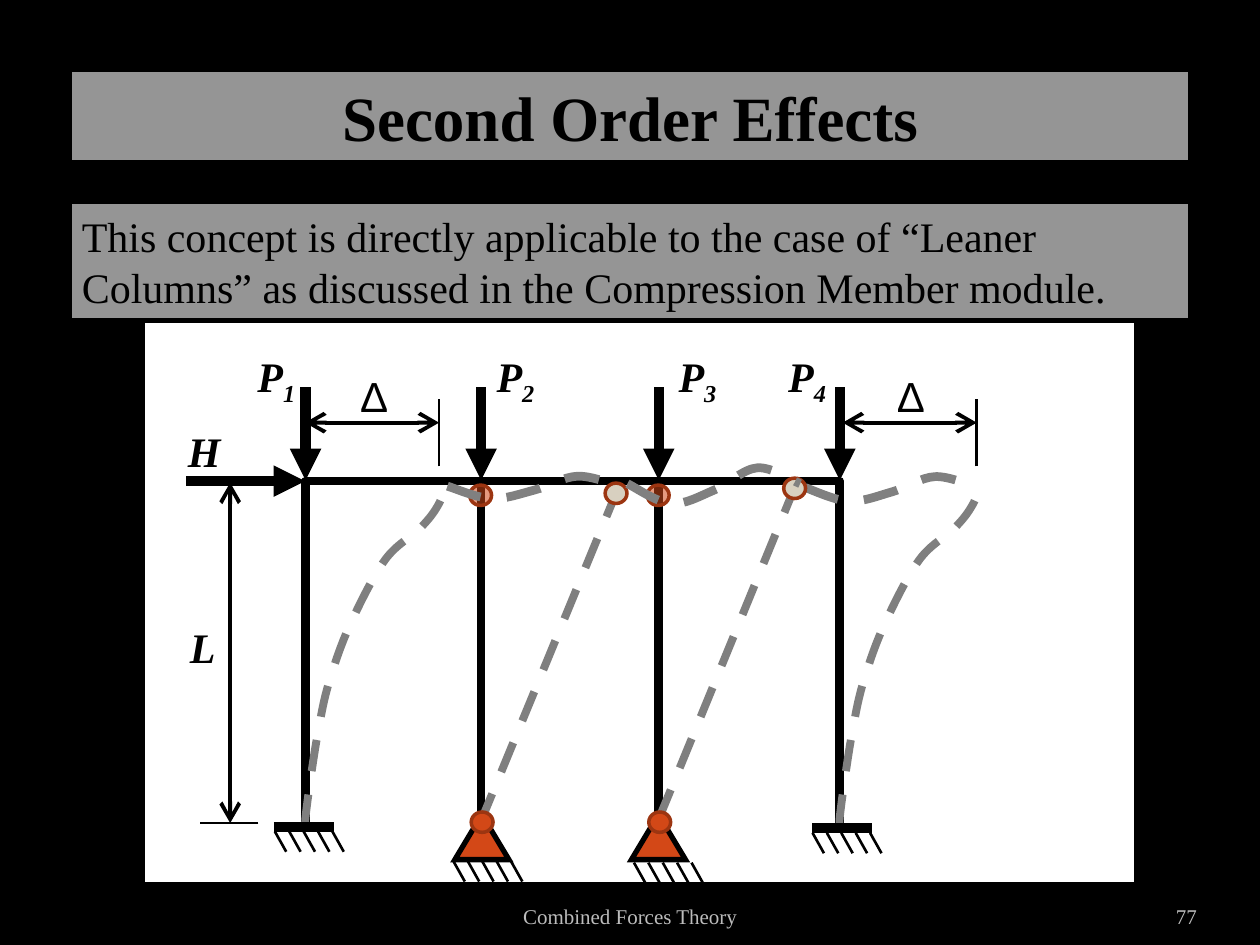
from dataclasses import dataclass

from pptx import Presentation
from pptx.dml.color import RGBColor
from pptx.enum.dml import MSO_LINE
from pptx.enum.shapes import MSO_CONNECTOR, MSO_SHAPE
from pptx.enum.text import MSO_ANCHOR, MSO_AUTO_SIZE, PP_ALIGN
from pptx.oxml.ns import qn
from pptx.util import Cm, Pt

DASH = MSO_LINE.DASH
STRAIGHT = MSO_CONNECTOR.STRAIGHT
RECTANGLE, OVAL = MSO_SHAPE.RECTANGLE, MSO_SHAPE.OVAL
TRIANGLE = MSO_SHAPE.ISOSCELES_TRIANGLE
TOP, MIDDLE, BOTTOM = MSO_ANCHOR.TOP, MSO_ANCHOR.MIDDLE, MSO_ANCHOR.BOTTOM
LEFT, CENTER, RIGHT = PP_ALIGN.LEFT, PP_ALIGN.CENTER, PP_ALIGN.RIGHT
NO_AUTOFIT = MSO_AUTO_SIZE.NONE


@dataclass(frozen=True)
class Theme:
    """Colours, fonts, type sizes and line widths of the slide."""
    black: str = "000000"
    white: str = "FFFFFF"
    banner: str = "F2F2F2"
    footer: str = "BCBCBC"
    sway: str = "7F7F7F"
    wave: str = "808080"
    hinge: str = "D34817"
    hinge_line: str = "9C3511"
    moved_hinge: str = "D8D0C0"
    serif: str = "Times New Roman"
    sans: str = "Arial"
    title_size: int = 36
    body_size: int = 24
    footer_size: int = 12
    member: float = 5
    load: float = 6
    dimension: float = 2.25
    thin: float = 1.5


THEME = Theme()
BEAM_Y = 9.7
COLUMNS = (6.16, 9.7, 13.28, 16.93)
SWAY_KNOTS = ((0, 0.03), (0, -0.15), (0.1, -0.91), (0.25, -1.85), (0.46, -2.82),
              (0.89, -4.01), (1.6, -5.33), (2.31, -5.97), (2.67, -6.43), (2.87, -6.93))
WAVE_KNOTS = ((0, 0), (0.88, 0.25), (1.75, 0.08), (2.62, -0.2), (3.48, 0))


def add_xml(parent, tag, **attributes):
    """Append an XML element to a parent."""
    child = parent.makeelement(qn(tag), attributes)
    parent.append(child)
    return child


def set_line(shape, color, width, dash=None):
    """Format the outline of a shape or connector."""
    shape.line.color.rgb = RGBColor.from_string(color)
    shape.line.width = Pt(width)
    if dash is not None:
        shape.line.dash_style = dash


def set_fill(shape, color, opacity=100):
    """Fill a shape with a colour of the given percent opacity."""
    shape.fill.solid()
    shape.fill.fore_color.rgb = RGBColor.from_string(color)
    if opacity < 100:
        tone = shape.element.spPr.xpath("a:solidFill/a:srgbClr")[0]
        add_xml(tone, "a:alpha", val=str(opacity * 1000))


def write_text(shape, text, subscript="", size=THEME.body_size, font=THEME.serif,
               color=THEME.black, bold=False, italic=False, align=LEFT, anchor=TOP):
    """Write one formatted paragraph with an optional subscript."""
    frame = shape.text_frame
    frame.word_wrap = True
    frame.auto_size = NO_AUTOFIT
    frame.vertical_anchor = anchor
    paragraph = frame.paragraphs[0]
    paragraph.alignment = align
    for content in filter(None, (text, subscript)):
        run = paragraph.add_run()
        run.text = content
        run.font.name = font
        run.font.size = Pt(size)
        run.font.bold = bold
        run.font.italic = italic
        run.font.color.rgb = RGBColor.from_string(color)
    if subscript:
        run.font._element.set("baseline", "-25000")


def add_label(slide, text, left, top, width, height=1.27, **text_format):
    """Add a text box and return it."""
    box = slide.shapes.add_textbox(Cm(left), Cm(top), Cm(width), Cm(height))
    write_text(box, text, **text_format)
    return box


def add_figure(slide, kind, left, top, width, height, fill, line, line_width, opacity=100):
    """Add a filled and outlined preset shape with sharp corners."""
    shape = slide.shapes.add_shape(kind, Cm(left), Cm(top), Cm(width), Cm(height))
    shape.shadow.inherit = False
    set_fill(shape, fill, opacity)
    set_line(shape, line, line_width)
    add_xml(shape.line._get_or_add_ln(), "a:miter", lim="800000")
    return shape


def add_line(slide, start, end, width, color=THEME.black, dash=None, head=None, tail=None,
             arrow_size="med"):
    """Add a straight line with optional arrowheads."""
    line = slide.shapes.add_connector(STRAIGHT, *map(Cm, (*start, *end)))
    set_line(line, color, width, dash)
    outline = line.line._get_or_add_ln()
    for tag, arrow in (("a:headEnd", head), ("a:tailEnd", tail)):
        if arrow:
            add_xml(outline, tag, type=arrow, w=arrow_size, len=arrow_size)
    add_xml(line.element.spPr, "a:effectLst")


def add_outline(slide, points, color, width, dash=None):
    """Add an open unfilled outline through points and return it."""
    (left, top), *rest = [(Cm(x), Cm(y)) for x, y in points]
    builder = slide.shapes.build_freeform(left, top)
    builder.add_line_segments(rest, close=False)
    shape = builder.convert_to_shape()
    shape.shadow.inherit = False
    shape.fill.background()
    set_line(shape, color, width, dash)
    return shape


def curve_points(knots):
    """Return the knots with the Bézier controls of a smooth curve between them."""
    padded = [knots[0], *knots, knots[-1]]
    points = [knots[0]]
    for a, b, c, d in zip(padded, padded[1:], padded[2:], padded[3:]):
        points.append(tuple(q + (r - p) / 6 for p, q, r in zip(a, b, c)))
        points.append(tuple(r - (s - q) / 6 for q, r, s in zip(b, c, d)))
        points.append(c)
    return points


def add_curve(slide, left, top, knots, color, width, height_scale=1):
    """Add a dashed deflection curve starting at a point."""
    placed = [(left + x, top + y * height_scale) for x, y in knots]
    shape = add_outline(slide, curve_points(placed), color, width, DASH)
    segments = shape.element.xpath(".//a:lnTo")
    outline = segments[0].getparent()
    for index in range(0, len(segments), 3):
        curve = add_xml(outline, "a:cubicBezTo")
        for segment in segments[index:index + 3]:
            curve.append(segment[0])
            outline.remove(segment)


def add_hatching(slide, left, top):
    """Add the ground strokes under a support."""
    for index in range(5):
        x = left + 0.29 * index
        add_line(slide, (x, top), (x + 0.23, top + 0.41), THEME.thin)


def add_dimension(slide, start, end):
    """Add a double-headed dimension line."""
    add_line(slide, start, end, THEME.dimension, head="arrow", tail="arrow", arrow_size="lg")


def add_hinge(slide, left, top, fill=THEME.hinge, opacity=100):
    """Add a round hinge."""
    add_figure(slide, OVAL, left, top, 0.44, 0.41, fill, THEME.hinge_line, 2, opacity)


def add_banners(slide):
    """Add the title and the statement below it."""
    title = slide.shapes.title
    title.left, title.top, title.width, title.height = map(Cm, (1.4, 1.4, 22.61, 1.88))
    set_fill(title, THEME.banner, 62)
    set_line(title, THEME.black, 3)
    write_text(title, "Second Order Effects", size=THEME.title_size, bold=True,
               align=CENTER, anchor=MIDDLE)
    statement = add_figure(slide, RECTANGLE, 1.4, 4.07, 22.61, 2.39,
                           THEME.banner, THEME.black, 3, 62)
    write_text(statement, "This concept is directly applicable to the case of “Leaner Columns” "
               "as discussed in the Compression Member module.", anchor=MIDDLE)


def add_frame(slide):
    """Add the undeformed frame, its loads and its ground."""
    for left, top in ((5.54, 16.76), (9.14, 17.36), (12.78, 17.39), (16.38, 16.79)):
        add_hatching(slide, left, top)
    first, *inner, last = COLUMNS
    add_outline(slide, ((first, 16.64), (first, BEAM_Y), (last, BEAM_Y), (last, 16.64)),
                THEME.black, THEME.member)
    for x in inner:
        add_line(slide, (x, 16.66), (x, 9.73), THEME.member)
    for x in COLUMNS:
        add_line(slide, (x, 9.68), (x, 7.8), THEME.load, head="triangle")
    add_line(slide, (6.15, BEAM_Y), (3.75, BEAM_Y), THEME.load, head="triangle")


def add_dimensions(slide):
    """Add the drift and height dimensions with all symbols."""
    add_line(slide, (5.21, 16.59), (4.04, 16.59), THEME.thin)
    add_dimension(slide, (4.64, 9.73), (4.64, 16.59))
    for start, label_left in ((6.15, 7.01), (16.99, 17.83)):
        end = start + 2.7
        add_line(slide, (end, 9.4), (end, 8.05), THEME.thin)
        add_dimension(slide, (start, 8.52), (end, 8.52))
        add_label(slide, "Δ", label_left, 7.34, 1.22, font=THEME.sans)
    for number, left in enumerate((4.94, 9.76, 13.43, 15.64), start=1):
        add_label(slide, "P", left, 6.94, 1.66, subscript=str(number), bold=True, italic=True)
    for text, left, top in (("H", 3.54, 8.46), ("L", 3.58, 12.41)):
        add_label(slide, text, left, top, 1.38, bold=True, italic=True)


def add_deflection(slide):
    """Add the supports, hinges and dashed deflected frame."""
    add_curve(slide, 16.23, 9.83, WAVE_KNOTS, THEME.wave, THEME.member, 1.1)
    for x in (COLUMNS[0], COLUMNS[-1]):
        add_curve(slide, x, 16.62, SWAY_KNOTS, THEME.sway, 4.5)
    for left in (9.17, 12.73):
        add_figure(slide, TRIANGLE, left, 16.42, 1.09, 0.91, THEME.hinge, THEME.black, 3)
    for start, end in (((9.68, 16.59), (12.52, 9.7)), ((13.28, 16.51), (16.1, 9.63))):
        add_line(slide, start, end, 4.5, THEME.sway, DASH)
    for x in COLUMNS[1:3]:
        add_hinge(slide, x - 0.2, 16.37)
        add_hinge(slide, x - 0.23, 9.78, opacity=55)
    for left, top in ((12.2, 9.74), (15.8, 9.64)):
        add_hinge(slide, left, top, THEME.moved_hinge)
    add_curve(slide, 12.65, 9.75, WAVE_KNOTS, THEME.wave, THEME.member, 1.6)
    add_curve(slide, 9.02, 9.8, WAVE_KNOTS, THEME.wave, THEME.member)
    for left, y in ((5.52, 16.67), (16.37, 16.69)):
        add_line(slide, (left, y), (left + 1.21, y), THEME.load)


def add_footer(slide):
    """Add the module name and the page number."""
    style = {"size": THEME.footer_size, "color": THEME.footer, "anchor": BOTTOM}
    add_label(slide, "Combined Forces Theory", 8.68, 17.82, 8.05, 1.02, align=CENTER, **style)
    number = add_label(slide, "77", 22.02, 17.82, 2.11, 1.02, align=RIGHT, **style)
    number.text_frame.margin_left = number.text_frame.margin_right = 0


def main():
    """Build and save the slide."""
    presentation = Presentation()
    presentation.slide_width, presentation.slide_height = Cm(25.4), Cm(19.05)
    slide = presentation.slides.add_slide(presentation.slide_layouts[5])
    set_fill(slide.background, THEME.black)
    add_figure(slide, RECTANGLE, 2.88, 6.44, 20.01, 11.38, THEME.white, THEME.black, 2)
    add_frame(slide)
    add_dimensions(slide)
    add_deflection(slide)
    add_banners(slide)
    add_footer(slide)
    presentation.save("out.pptx")


if __name__ == "__main__":
    main()
